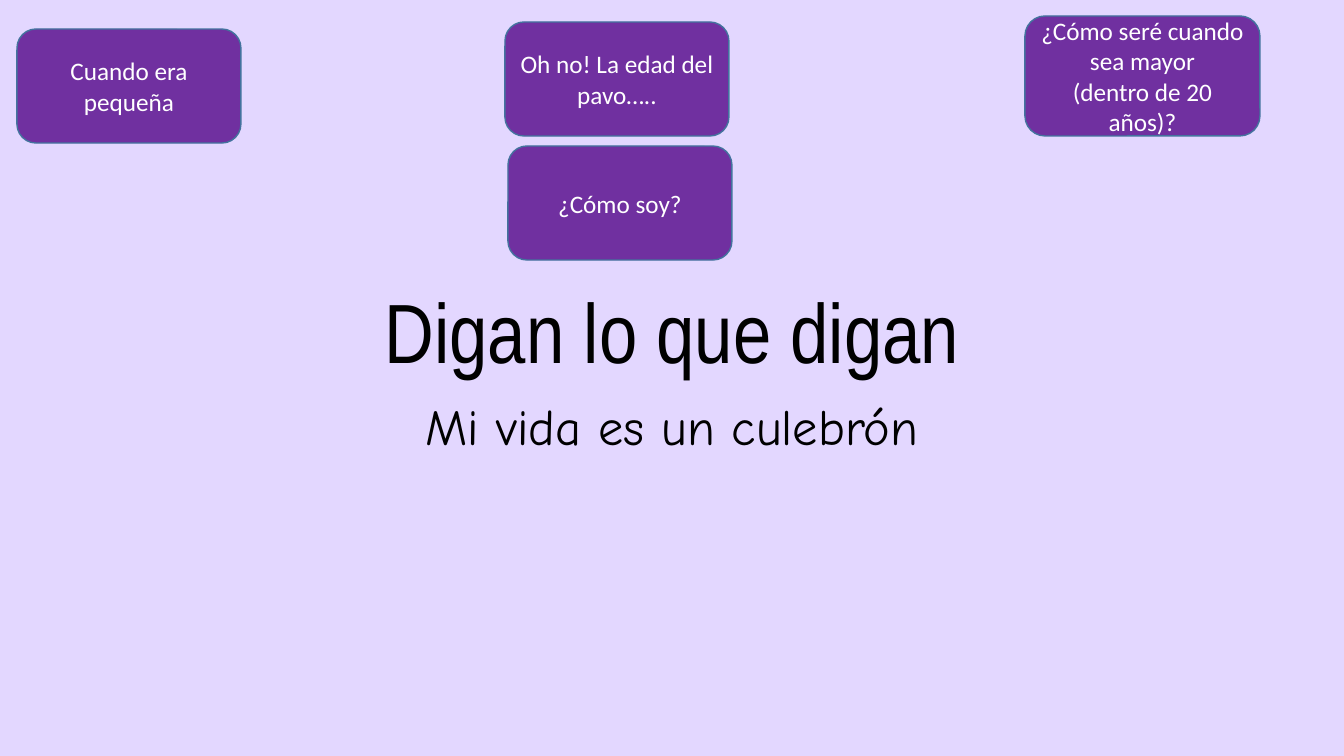
import pptx
import pptx.util
import pptx.dml.color
import pptx.enum.shapes
import pptx.enum.text

PX = 914400 / 100.8
RGB = pptx.dml.color.RGBColor
LILAC = RGB(0xE3, 0xD7, 0xFF)
PURPLE = RGB(0x70, 0x30, 0xA0)
BLUE = RGB(0x43, 0x73, 0x9E)
WHITE = RGB(0xFF, 0xFF, 0xFF)
BLACK = RGB(0, 0, 0)
ANCHOR = pptx.enum.text.MSO_ANCHOR


def px(*lengths):
    return [round(n * PX) for n in lengths]


def write(sp, text, font, size, color, anchor, spacing=None):
    tf = sp.text_frame
    tf.word_wrap = True
    tf.vertical_anchor = anchor
    tf.text = text
    for p in tf.paragraphs:
        p.alignment = pptx.enum.text.PP_ALIGN.CENTER
        p.line_spacing = spacing
        for r in p.runs:
            r.font.name = font
            r.font.size = pptx.util.Pt(size)
            r.font.color.rgb = color


prs = pptx.Presentation()
prs.slide_width, prs.slide_height = px(1344, 756)
s = prs.slides.add_slide(prs.slide_layouts[6])
s.background.fill.solid()
s.background.fill.fore_color.rgb = LILAC

# Title and subtitle
sp = s.shapes.add_textbox(*px(168, 124, 1008, 263))
write(sp, "Digan lo que digan", "Arial Narrow", 60, BLACK, ANCHOR.BOTTOM, 0.9)
sp = s.shapes.add_textbox(*px(168, 397, 1008, 183))
write(sp, "Mi vida es un culebrón", "Comic Neue", 36, BLACK, ANCHOR.TOP, 0.9)
sp.text_frame.paragraphs[0].space_before = pptx.util.Pt(10)

# Stages of life
stages = [
    (508, 146, 224, 114, "¿Cómo soy?"),
    (17, 29, 224, 114, "Cuando era pequeña"),
    (505, 22, 224, 114, "Oh no! La edad del pavo….."),
    (1025, 16, 235, 120, "¿Cómo seré cuando sea mayor\n(dentro de 20 años)?"),
]
for left, top, width, height, text in stages:
    sp = s.shapes.add_shape(pptx.enum.shapes.MSO_SHAPE.ROUNDED_RECTANGLE,
                            *px(left, top, width, height))
    sp.shadow.inherit = False
    sp.fill.solid()
    sp.fill.fore_color.rgb = PURPLE
    sp.line.color.rgb = BLUE
    sp.line.width = pptx.util.Pt(1)
    write(sp, text, "Calibri", 18, WHITE, ANCHOR.MIDDLE)

prs.save("out.pptx")
